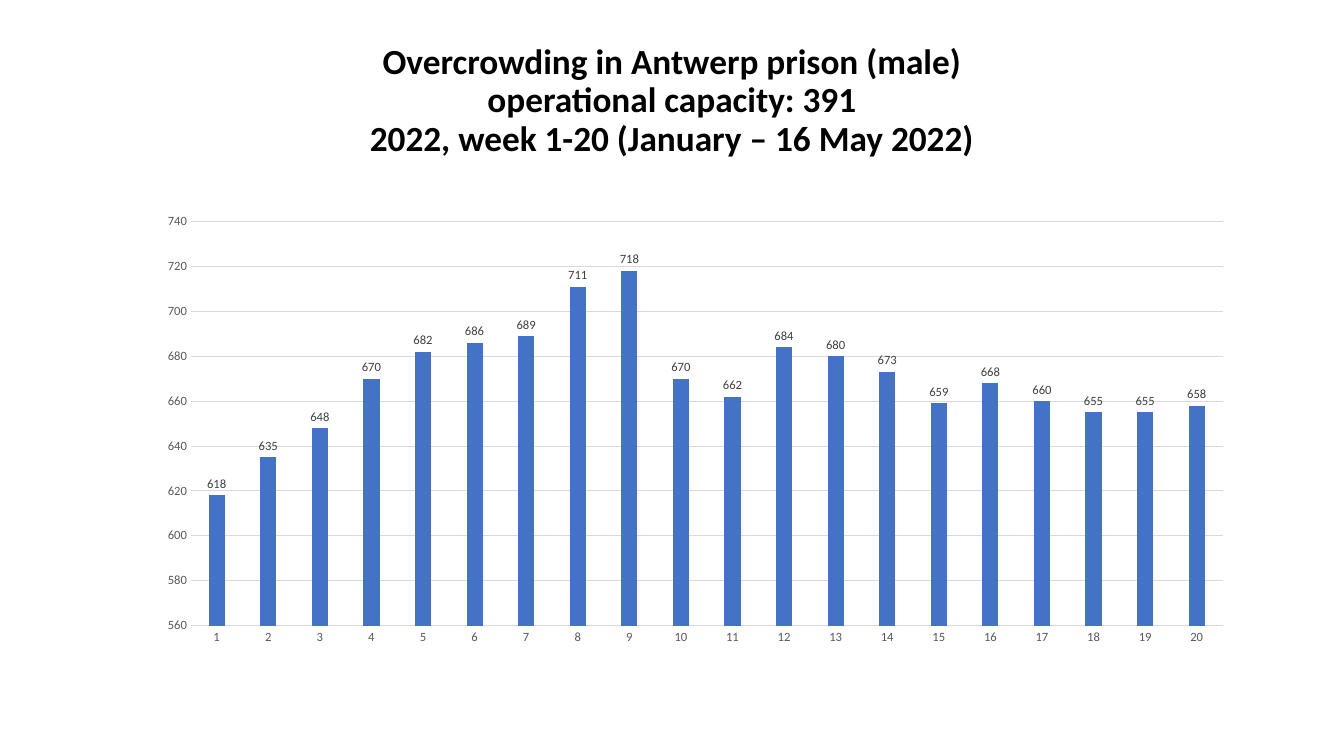
from dataclasses import dataclass

from lxml import etree
from pptx import Presentation
from pptx.chart.data import CategoryChartData
from pptx.dml.color import RGBColor
from pptx.enum.chart import XL_CHART_TYPE, XL_LABEL_POSITION, XL_TICK_MARK
from pptx.enum.text import MSO_ANCHOR, MSO_AUTO_SIZE, PP_ALIGN
from pptx.oxml.ns import qn
from pptx.util import Pt

COLUMNS = XL_CHART_TYPE.COLUMN_CLUSTERED
OUTSIDE_END = XL_LABEL_POSITION.OUTSIDE_END
NO_TICKS = XL_TICK_MARK.NONE
MIDDLE = MSO_ANCHOR.MIDDLE
NO_AUTOFIT = MSO_AUTO_SIZE.NONE
CENTER = PP_ALIGN.CENTER

TITLE_ONLY = 5
SLIDE_SIZE = (960, 540)
MARGIN = 66
CONTENT_WIDTH = 828

TITLE = (
    "Overcrowding in Antwerp prison (male)\n"
    "operational capacity: 391\n"
    "2022, week 1-20 (January – 16 May 2022)"
)
PRISONERS_PER_WEEK = [
    618, 635, 648, 670, 682, 686, 689, 711, 718, 670,
    662, 684, 680, 673, 659, 668, 660, 655, 655, 658,
]


@dataclass(frozen=True)
class Theme:
    font: str = "Calibri"
    title: str = "000000"
    column: str = "4472C4"
    grid: str = "D9D9D9"
    axis_text: str = "595959"
    label_text: str = "404040"
    title_size: float = 25.2
    chart_size: float = 10
    axis_size: float = 9
    hairline: float = 0.75


class SlideBuilder:
    def __init__(self, slide, theme):
        self.slide = slide
        self.theme = theme

    def style_font(self, font, size, color, bold=False):
        font.name = self.theme.font
        font.size = Pt(size)
        font.bold = bold
        font.color.rgb = RGBColor.from_string(color)

    def set_text(self, frame, text, *, size, color, bold=False, align=CENTER, spacing=1.0):
        """Fill a text frame with one paragraph; newlines become line breaks."""
        paragraph = frame.paragraphs[0]
        paragraph.text = text
        paragraph.alignment = align
        paragraph.line_spacing = spacing
        for run in paragraph.runs:
            self.style_font(run.font, size, color, bold)

    def title(self, text, left, top, width, height, bottom_inset):
        title = self.slide.shapes.title
        title.left, title.top = Pt(left), Pt(top)
        title.width, title.height = Pt(width), Pt(height)
        frame = title.text_frame
        frame.word_wrap = True
        frame.auto_size = NO_AUTOFIT
        frame.vertical_anchor = MIDDLE
        frame.margin_bottom = Pt(bottom_inset)
        self.set_text(frame, text, size=self.theme.title_size, color=self.theme.title,
                      bold=True, spacing=0.9)

    def style_line(self, line):
        line.color.rgb = RGBColor.from_string(self.theme.grid)
        line.width = Pt(self.theme.hairline)

    def style_axis(self, axis):
        axis.major_tick_mark = axis.minor_tick_mark = NO_TICKS
        self.style_font(axis.tick_labels.font, self.theme.axis_size, self.theme.axis_text)

    def place_plot(self, chart, **fractions):
        """Fix the inner plot area at fractions of the chart frame."""
        plot_area = chart.element.find(f".//{qn('c:plotArea')}")
        for automatic in plot_area.findall(qn("c:layout")):
            plot_area.remove(automatic)
        layout = etree.Element(qn("c:layout"))
        manual = etree.SubElement(layout, qn("c:manualLayout"))
        settings = {"layoutTarget": "inner", "xMode": "edge", "yMode": "edge", **fractions}
        for name, value in settings.items():
            etree.SubElement(manual, qn(f"c:{name}"), val=str(value))
        plot_area.insert(0, layout)

    def column_chart(self, categories, values, left, top, width, height):
        data = CategoryChartData()
        data.categories = categories
        data.add_series("Series 1", values)
        chart = self.slide.shapes.add_chart(
            COLUMNS, Pt(left), Pt(top), Pt(width), Pt(height), data
        ).chart
        chart.has_title = chart.has_legend = False
        self.style_font(chart.font, self.theme.chart_size, self.theme.title)
        self.place_plot(chart, x=0.085, y=0.042, w=0.89, h=0.842)

        self.style_axis(chart.category_axis)
        self.style_line(chart.category_axis.format.line)

        value_axis = chart.value_axis
        self.style_axis(value_axis)
        value_axis.minimum_scale, value_axis.maximum_scale = 560, 740
        value_axis.major_unit = 20
        value_axis.format.line.fill.background()
        value_axis.has_major_gridlines = True
        self.style_line(value_axis.major_gridlines.format.line)

        plot = chart.plots[0]
        plot.gap_width, plot.overlap = 219, -27
        plot.vary_by_categories = False
        weekly = plot.series[0]
        weekly.format.fill.solid()
        weekly.format.fill.fore_color.rgb = RGBColor.from_string(self.theme.column)
        labels = weekly.data_labels
        labels.show_value = True
        labels.position = OUTSIDE_END
        self.style_font(labels.font, self.theme.axis_size, self.theme.label_text)


def main():
    deck = Presentation()
    deck.slide_width, deck.slide_height = map(Pt, SLIDE_SIZE)
    slide = deck.slides.add_slide(deck.slide_layouts[TITLE_ONLY])
    builder = SlideBuilder(slide, Theme())
    builder.title(TITLE, MARGIN, 28.75, CONTENT_WIDTH, 115, bottom_inset=31)
    weeks = [str(week) for week in range(1, len(PRISONERS_PER_WEEK) + 1)]
    builder.column_chart(weeks, PRISONERS_PER_WEEK, MARGIN, 144, CONTENT_WIDTH, 342.6)
    deck.save("out.pptx")


if __name__ == "__main__":
    main()
